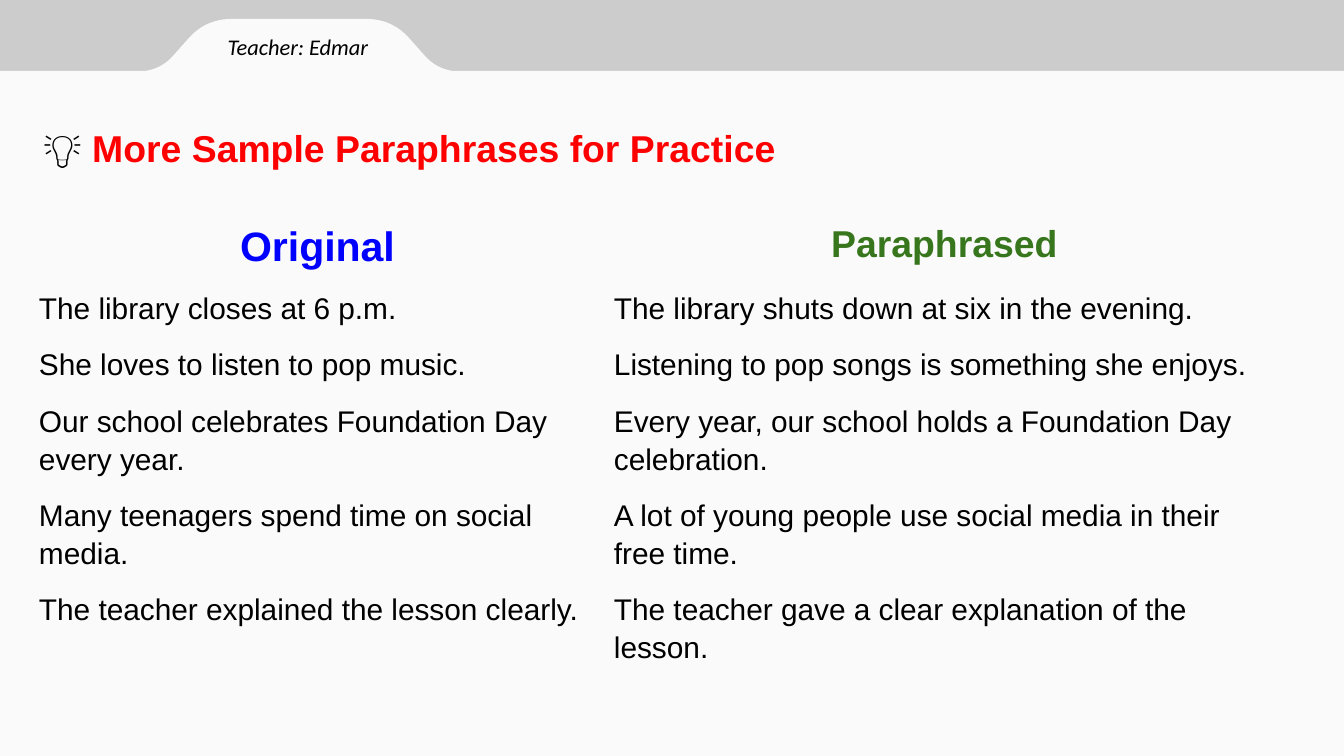
from lxml.etree import SubElement
from pptx import Presentation
from pptx.dml.color import RGBColor
from pptx.enum.shapes import MSO_SHAPE
from pptx.enum.text import MSO_ANCHOR, MSO_AUTO_SIZE, PP_ALIGN
from pptx.oxml.ns import qn
from pptx.util import Emu, Pt

WIDTH, HEIGHT = 1344, 756
GREY, PAPER, BLACK = "CCCCCC", "FAFAFA", "000000"
RED, BLUE, GREEN = "FF0000", "0000FF", "38761D"


def px(n):
    return Emu(round(n * 914400 / 134.4))


def color(hex_string):
    return RGBColor.from_string(hex_string)


def curve(start, control, end, steps=12):
    """Points along a quadratic curve."""
    points = []
    for i in range(steps + 1):
        t = i / steps
        points.append(tuple((1 - t) ** 2 * a + 2 * t * (1 - t) * b + t * t * c
                            for a, b, c in zip(start, control, end)))
    return points


class Deck:
    font, line_spacing = "Arial", 1.15

    def __init__(self):
        self.prs = Presentation()
        self.prs.slide_width, self.prs.slide_height = px(WIDTH), px(HEIGHT)
        self.slide = self.prs.slides.add_slide(self.prs.slide_layouts[0])

    def background(self, fill):
        bg = self.slide.background.fill
        bg.solid()
        bg.fore_color.rgb = color(fill)

    def paint(self, sp, fill):
        sp.shadow.inherit = False
        sp.fill.solid()
        sp.fill.fore_color.rgb = color(fill)
        sp.line.fill.background()

    def panel(self, x, y, w, h, fill):
        sp = self.slide.shapes.add_shape(MSO_SHAPE.RECTANGLE, px(x), px(y), px(w), px(h))
        self.paint(sp, fill)

    def outline(self, points, fill):
        points = [(px(x), px(y)) for x, y in points]
        builder = self.slide.shapes.build_freeform(*points[0], scale=1.0)
        builder.add_line_segments(points[1:], close=True)
        self.paint(builder.convert_to_shape(), fill)

    def paragraph(self, p, runs, size, align=PP_ALIGN.LEFT, font=None, **style):
        """Fill a paragraph with (text, colour) runs."""
        p.alignment, p.line_spacing = align, self.line_spacing
        for text, hex_string in runs:
            r = p.add_run()
            r.text = text
            r.font.name, r.font.size = font or self.font, Pt(size)
            r.font.bold = style.get("bold", False)
            r.font.italic = style.get("italic", False)
            r.font.color.rgb = color(hex_string)

    def placeholder(self, idx, x, y, w, h, runs, size, anchor, inset=0,
                    before=0, after=0, **style):
        sp = self.slide.placeholders[idx]
        sp.left, sp.top, sp.width, sp.height = px(x), px(y), px(w), px(h)
        self.slide.shapes._spTree.append(sp._element)  # bring to front
        tf = sp.text_frame
        tf.word_wrap, tf.auto_size = True, MSO_AUTO_SIZE.NONE
        tf.vertical_anchor = anchor
        tf.margin_left = tf.margin_right = tf.margin_top = tf.margin_bottom = px(inset)
        p = tf.paragraphs[0]
        self.paragraph(p, runs, size, **style)
        p.space_before, p.space_after = Pt(before), Pt(after)

    def cell(self, cell, text, size, fg, **style):
        cell.margin_left = cell.margin_right = px(9)
        cell.margin_top = cell.margin_bottom = px(9)
        tc_pr = cell._tc.get_or_add_tcPr()
        for side in ("lnL", "lnR", "lnT", "lnB"):
            SubElement(SubElement(tc_pr, qn("a:" + side)), qn("a:noFill"))
        cell.fill.background()
        self.paragraph(cell.text_frame.paragraphs[0], [(text, fg)], size, **style)

    def table(self, x, y, widths, heights, headers, rows):
        frame = self.slide.shapes.add_table(len(heights), len(widths), px(x), px(y),
                                            px(sum(widths)), px(sum(heights)))
        tbl = frame.table
        tbl.first_row = tbl.horz_banding = False
        for col, w in zip(tbl.columns, widths):
            col.width = px(w)
        for row, h in zip(tbl.rows, heights):
            row.height = px(h)
        for c, (text, size, fg) in enumerate(headers):
            self.cell(tbl.cell(0, c), text, size, fg, align=PP_ALIGN.CENTER, bold=True)
        for r, texts in enumerate(rows, start=1):
            for c, text in enumerate(texts):
                self.cell(tbl.cell(r, c), text, 16, BLACK)


def main():
    deck = Deck()

    # Folder page with its tab
    deck.background(GREY)
    deck.panel(0, 71, WIDTH, HEIGHT - 71, PAPER)
    tab_center = 299
    left = (curve((134, 72), (159, 72), (173, 56))
            + curve((189, 38), (206, 19), (232, 19)))
    right = [(2 * tab_center - x, y) for x, y in reversed(left)]
    deck.outline(left + right, PAPER)

    # Teacher name and heading
    deck.placeholder(1, 188, 31, 220, 27, [("Teacher: Edmar", BLACK)], 12,
                     MSO_ANCHOR.MIDDLE, align=PP_ALIGN.CENTER,
                     font="Calibri", italic=True)
    deck.placeholder(0, 30, 105, 1012, 105,
                     [("💡 ", BLACK), ("More Sample Paraphrases for Practice", RED)], 20,
                     MSO_ANCHOR.TOP, inset=13, before=14, after=4, bold=True)

    # Sentence pairs
    deck.table(30, 208, [575, 679], [47] * 3 + [74] * 3,
               [("Original", 22, BLUE), ("Paraphrased", 20, GREEN)],
               [("The library closes at 6 p.m.",
                 "The library shuts down at six in the evening."),
                ("She loves to listen to pop music.",
                 "Listening to pop songs is something she enjoys."),
                ("Our school celebrates Foundation Day every year.",
                 "Every year, our school holds a Foundation Day celebration."),
                ("Many teenagers spend time on social media.",
                 "A lot of young people use social media in their free time."),
                ("The teacher explained the lesson clearly.",
                 "The teacher gave a clear explanation of the lesson.")])

    deck.prs.save("out.pptx")


if __name__ == "__main__":
    main()
